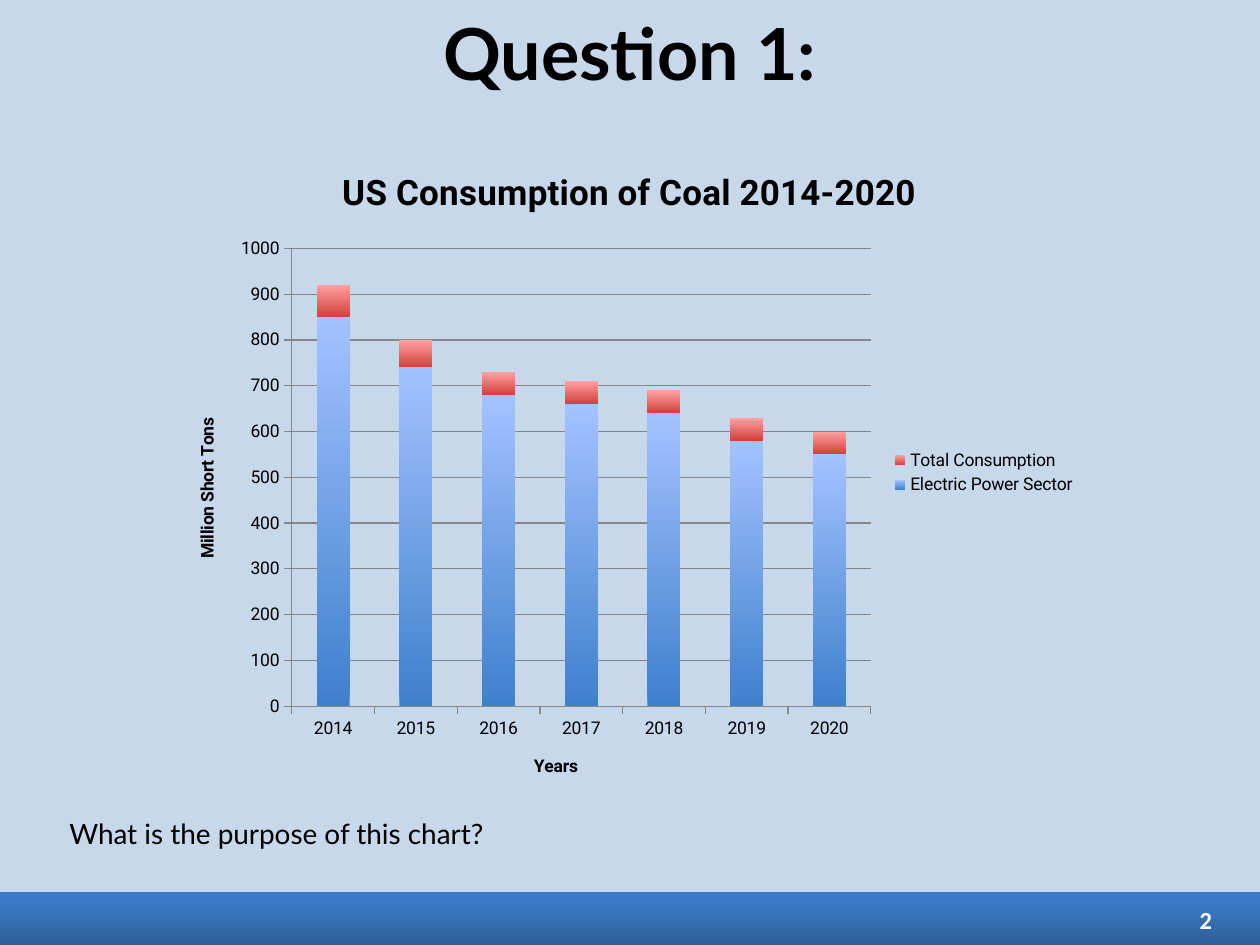
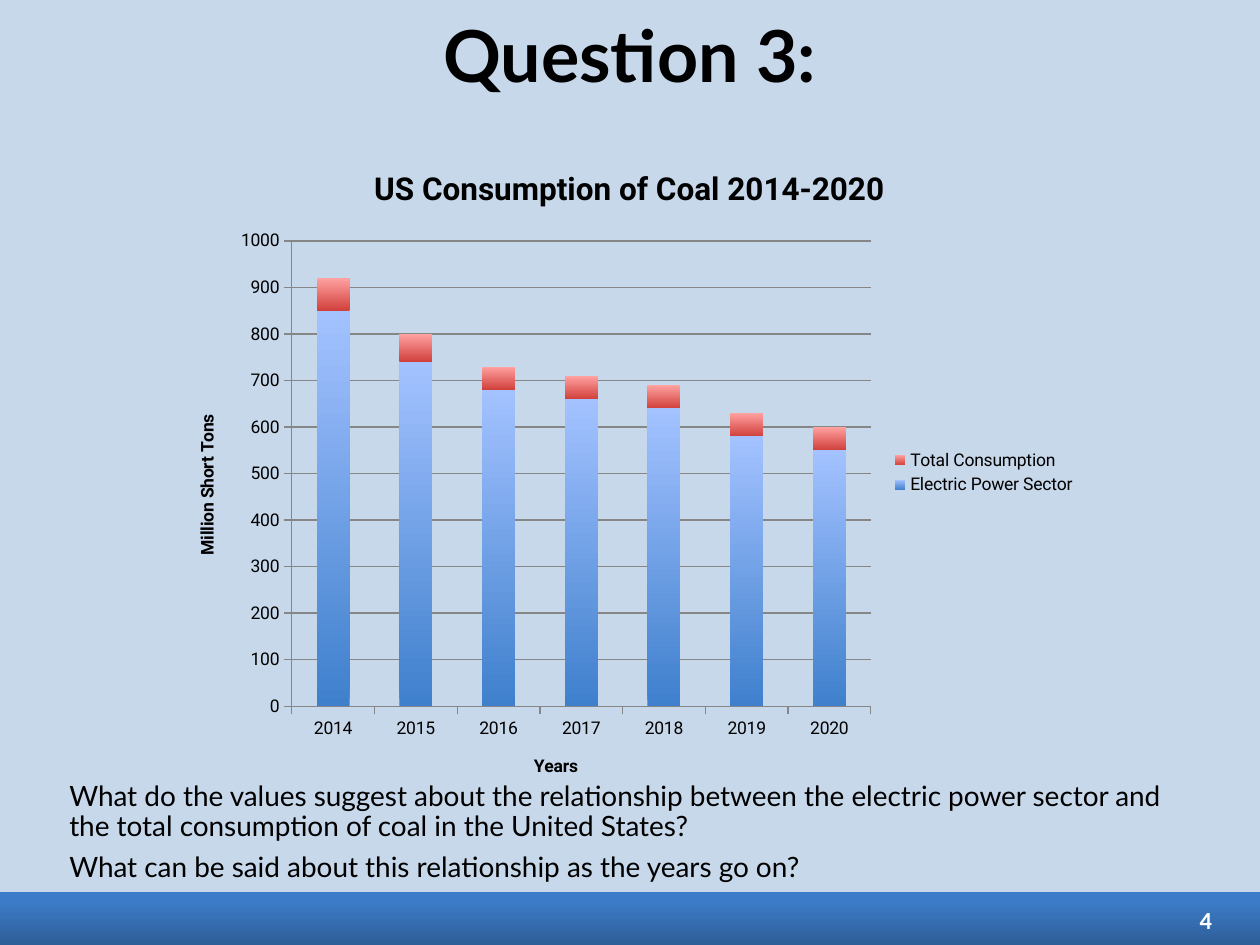
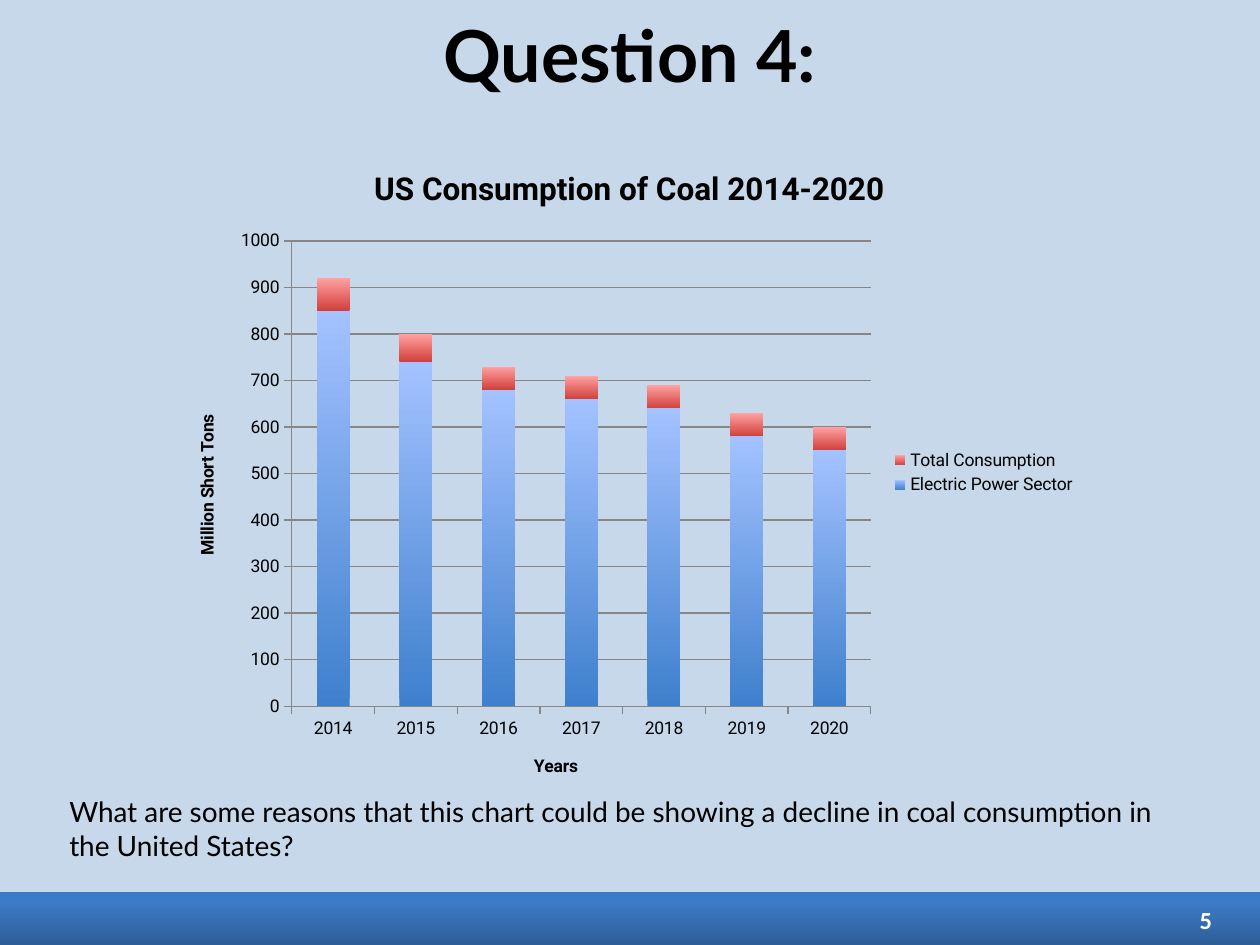
"""Build three question slides about US coal consumption."""
from copy import deepcopy
from dataclasses import dataclass

from pptx import Presentation
from pptx.chart.data import CategoryChartData
from pptx.dml.color import RGBColor
from pptx.enum.chart import XL_CHART_TYPE, XL_LEGEND_POSITION, XL_TICK_MARK
from pptx.enum.shapes import MSO_SHAPE
from pptx.enum.text import MSO_ANCHOR, MSO_AUTO_SIZE, PP_ALIGN
from pptx.oxml.ns import qn
from pptx.util import Inches, Pt

SLIDES = [
    {"title": "Question 1:", "number": "2", "title_top": -0.02, "chart_title_size": 20,
     "body": (6.43, 0.63), "line_spacing": 1.0,
     "questions": ["What is the purpose of this chart?"]},
    {"title": "Question 3:", "number": "4", "title_top": 0, "chart_title_size": 18,
     "body": (6.16, 0.98), "line_spacing": 0.9,
     "questions": [
         "What do the values suggest about the relationship between the electric power "
         "sector and the total consumption of coal in the United States?",
         "What can be said about this relationship as the years go on?"]},
    {"title": "Question 4:", "number": "5", "title_top": 0, "chart_title_size": 18,
     "body": (6.26, 0.8), "line_spacing": 1.0,
     "questions": [
         "What are some reasons that this chart could be showing a decline in coal "
         "consumption in the United States?"]},
]
CHART_TITLE = "US Consumption of Coal 2014-2020"
YEARS = [str(year) for year in range(2014, 2021)]
SERIES = {
    "Electric Power Sector": [850, 740, 680, 660, 640, 580, 550],
    "Total Consumption": [70, 60, 50, 50, 50, 50, 50],
}


@dataclass(frozen=True)
class Theme:
    background: str = "C8D8EB"
    text: str = "000000"
    number: str = "FFFFFF"
    axis: str = "868686"
    band: tuple = ((0, "2E5E97"), (0.8, "3C7BC7"), (1, "3A7CCA"))
    bars: tuple = (((0, "3F80CD"), (1, "A3C2FF")), ((0, "D1403C"), (1, "FFA2A1")))
    font: str = "Lato"
    chart_font: str = "Roboto"
    number_font: str = "Calibri"
    title_size: int = 41
    body_size: int = 16
    number_size: int = 14
    chart_size: int = 10


THEME = Theme()


def rgb(value):
    return RGBColor.from_string(value)


def style_font(font, name, size, color, bold=False):
    font.name, font.size, font.bold = name, Pt(size), bold
    font.color.rgb = rgb(color)


def fill_upward(element, fill, stops):
    fill.gradient()
    fill.gradient_angle = 90
    gs_list = element.find(".//" + qn("a:gsLst"))
    while len(gs_list) < len(stops):
        gs_list.append(deepcopy(gs_list[0]))
    for stop, (position, color) in zip(fill.gradient_stops, stops):
        stop.position = position
        stop.color.rgb = rgb(color)


def add_band(s):
    sp = s.shapes.add_shape(MSO_SHAPE.RECTANGLE, 0, Inches(7.08), Inches(10), Inches(0.42))
    sp.shadow.inherit = False
    sp.line.fill.background()
    fill_upward(sp._element, sp.fill, THEME.band)


def add_text(s, box, lines, name, size, color, bold=False, align=PP_ALIGN.LEFT,
             anchor=MSO_ANCHOR.MIDDLE, wrap=True, before=0, spacing=1.0):
    tf = s.shapes.add_textbox(*map(Inches, box)).text_frame
    tf.margin_left = tf.margin_right = tf.margin_top = tf.margin_bottom = Inches(0.05)
    tf.word_wrap = wrap
    tf.vertical_anchor = anchor
    tf.auto_size = MSO_AUTO_SIZE.NONE if wrap else MSO_AUTO_SIZE.SHAPE_TO_FIT_TEXT
    tf.text = "\n".join(lines)
    for p in tf.paragraphs:
        p.alignment, p.space_before, p.line_spacing = align, Pt(before), spacing
        style_font(p.runs[0].font, name, size, color, bold)


def set_chart_title(owner, text, size):
    tf = owner.text_frame
    tf.text = text
    style_font(tf.paragraphs[0].runs[0].font, THEME.chart_font, size, THEME.text, True)


def add_coal_chart(s, title_size):
    data = CategoryChartData()
    data.categories = YEARS
    for name, values in SERIES.items():
        data.add_series(name, values)
    chart = s.shapes.add_chart(XL_CHART_TYPE.COLUMN_STACKED, Inches(1.35), Inches(1.13),
                               Inches(7.29), Inches(5.24), data).chart
    style_font(chart.font, THEME.chart_font, THEME.chart_size, THEME.text)
    set_chart_title(chart.chart_title, CHART_TITLE, title_size)
    chart.chart_title.include_in_layout = False
    chart.has_legend = True
    chart.legend.position = XL_LEGEND_POSITION.RIGHT
    chart.legend.include_in_layout = False

    plot = chart.plots[0]
    plot.gap_width, plot.overlap, plot.vary_by_categories = 150, 100, False
    for series, stops in zip(plot.series, THEME.bars):
        fill_upward(series._element, series.format.fill, stops)

    for axis, title in ((chart.category_axis, "Years"),
                        (chart.value_axis, "Million Short Tons")):
        set_chart_title(axis.axis_title, title, THEME.chart_size)
        axis.major_tick_mark = XL_TICK_MARK.OUTSIDE
        axis.format.line.color.rgb = rgb(THEME.axis)
    chart.value_axis.has_major_gridlines = True
    chart.value_axis.major_gridlines.format.line.color.rgb = rgb(THEME.axis)


def add_question_slide(prs, content):
    s = prs.slides.add_slide(prs.slide_layouts[6])
    s.background.fill.solid()
    s.background.fill.fore_color.rgb = rgb(THEME.background)
    add_band(s)
    add_text(s, (0.5, content["title_top"], 9, 0.86), [content["title"]], THEME.font,
             THEME.title_size, THEME.text, bold=True, align=PP_ALIGN.CENTER)
    top, height = content["body"]
    add_text(s, (0.5, top, 9, height), content["questions"], THEME.font, THEME.body_size,
             THEME.text, anchor=MSO_ANCHOR.TOP, before=6, spacing=content["line_spacing"])
    add_text(s, (9.44, 7.14, 0.23, 0.32), [content["number"]], THEME.number_font,
             THEME.number_size, THEME.number, bold=True, align=PP_ALIGN.RIGHT, wrap=False)
    add_coal_chart(s, content["chart_title_size"])


def main():
    prs = Presentation()
    prs.slide_width, prs.slide_height = Inches(10), Inches(7.5)
    for content in SLIDES:
        add_question_slide(prs, content)
    prs.save("out.pptx")


if __name__ == "__main__":
    main()
